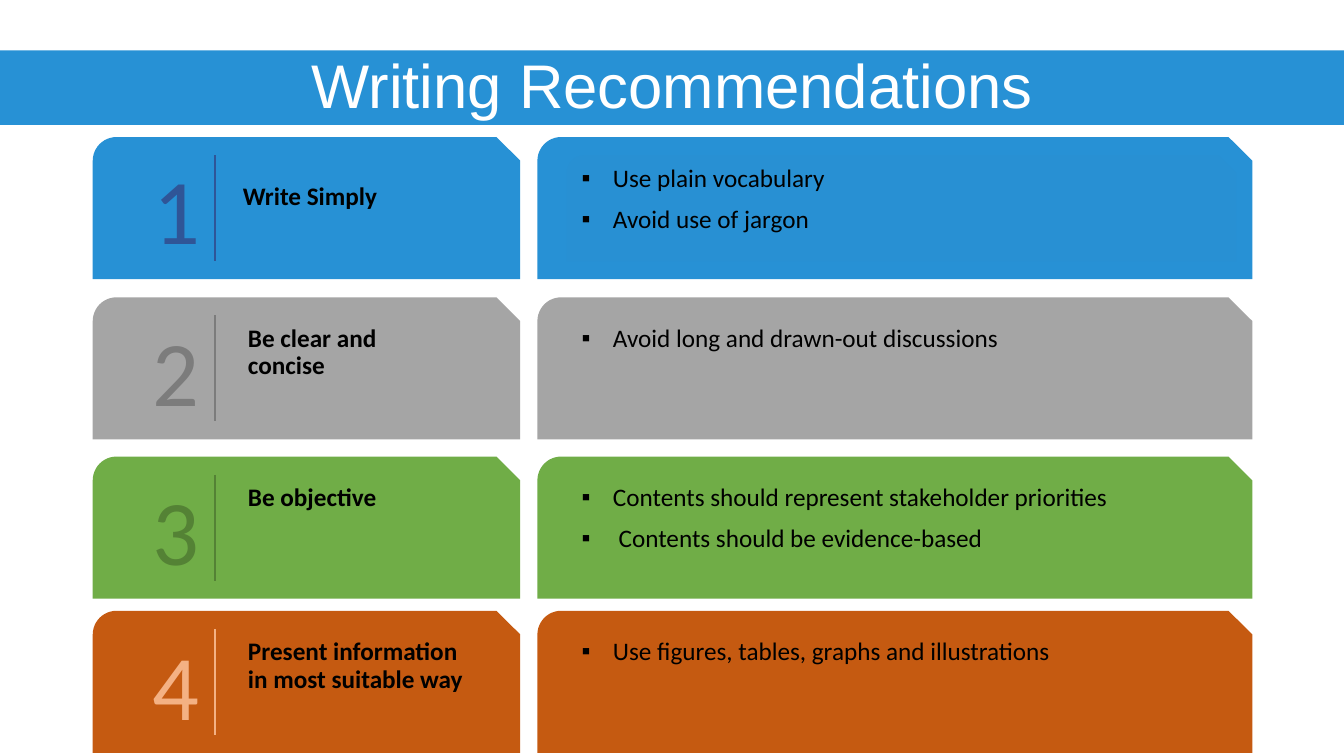
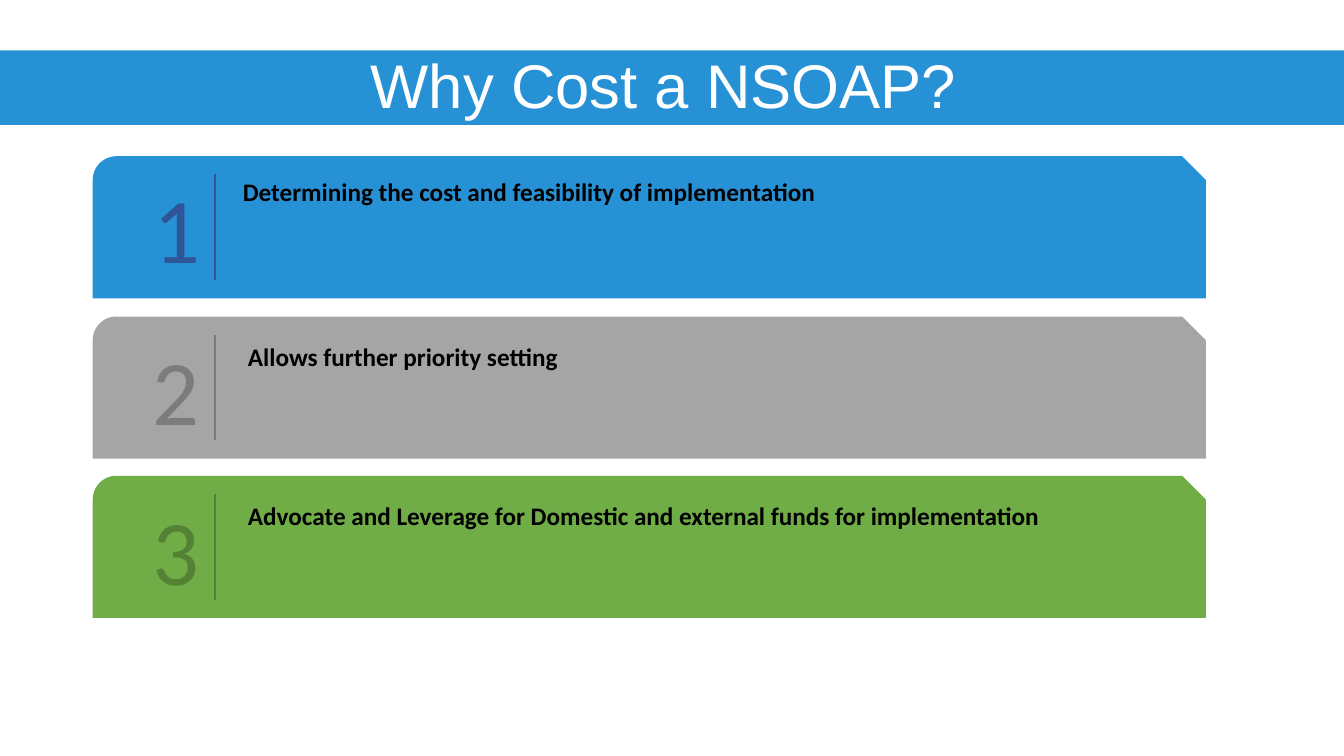
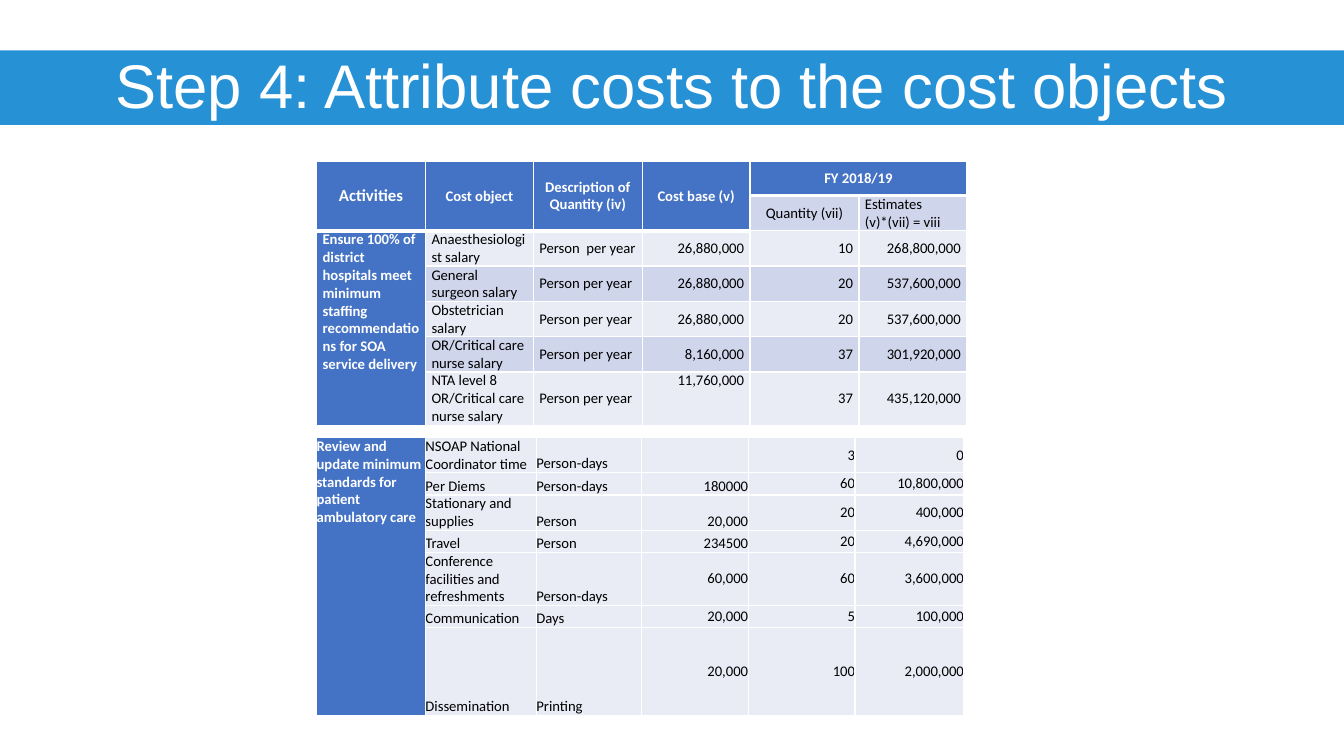
from lxml import etree
from pptx import Presentation
from pptx.dml.color import RGBColor
from pptx.enum.shapes import MSO_CONNECTOR, MSO_SHAPE
from pptx.enum.text import MSO_ANCHOR, PP_ALIGN
from pptx.oxml.ns import qn
from pptx.util import Pt

PX = 9144  # 100 px to the inch


class Theme:
    band = "2791D5"
    white = "FFFFFF"
    black = "000000"
    bullet_panel = "2890D3"
    head = "4472C4"
    dark_row = "CFD5EA"
    light_row = "E9EBF5"
    # card fill, number colour
    cards = [("2791D5", "2F5597"), ("A5A5A5", "7C7C7C"),
             ("70AD47", "548235"), ("C55A11", "F4B183")]
    title = {"name": "Arial", "size": Pt(44)}
    number = {"name": "Calibri", "size": Pt(66)}
    heading = {"name": "Calibri", "size": Pt(18), "bold": True}
    body = {"name": "Calibri", "size": Pt(18)}
    cell = {"name": "Calibri", "size": Pt(10.5), "bold": False}
    cell_head = {"name": "Calibri", "size": Pt(10.5), "bold": True}
    cell_first = {"name": "Calibri", "size": Pt(12), "bold": True}


ANCHOR = {"t": MSO_ANCHOR.TOP, "m": MSO_ANCHOR.MIDDLE, "b": MSO_ANCHOR.BOTTOM}
ALIGN = {"l": PP_ALIGN.LEFT, "c": PP_ALIGN.CENTER, "r": PP_ALIGN.RIGHT}
TIGHT = {"line_spacing": 0.9, "alignment": PP_ALIGN.LEFT}
NO_INSET = dict.fromkeys(
    ["margin_left", "margin_top", "margin_right", "margin_bottom"], 0)
CARD = MSO_SHAPE.SNIP_ROUND_RECTANGLE


def box(s, kind, x, y, w, h, fill=None):
    """Add a filled preset shape, or a text box when kind is None."""
    at = [v * PX for v in (x, y, w, h)]
    if kind is None:
        return s.shapes.add_textbox(*at)
    sp = s.shapes.add_shape(kind, *at)
    sp.shadow.inherit = False
    sp.fill.solid()
    sp.fill.fore_color.rgb = RGBColor.from_string(fill)
    sp.line.fill.background()
    return sp


def write(tf, lines, font, color, para, frame, bullet=None):
    """Fill a text frame with one paragraph per line."""
    for name, value in {"word_wrap": True, **frame}.items():
        setattr(tf, name, value)
    for i, line in enumerate(lines):
        p = tf.add_paragraph() if i else tf.paragraphs[0]
        for name, value in para.items():
            setattr(p, name, value)
        if i:
            p.space_before = Pt(10)
        if bullet:
            pPr = p._p.get_or_add_pPr()
            pPr.set("marL", str(31 * PX))
            pPr.set("indent", str(-31 * PX))
            etree.SubElement(pPr, qn("a:buFont"), typeface="Arial")
            etree.SubElement(pPr, qn("a:buChar"), char=bullet)
        r = p.add_run()
        r.text = line
        for name, value in font.items():
            setattr(r.font, name, value)
        r.font.color.rgb = RGBColor.from_string(color)


prs = Presentation()
prs.slide_width, prs.slide_height = 1333 * PX, 750 * PX

# Slides with the shared band and title
slides = []
for title in ["Writing Recommendations", "Why Cost a NSOAP? ",
              "Step 4: Attribute costs to the cost objects"]:
    s = prs.slides.add_slide(prs.slide_layouts[6])
    box(s, MSO_SHAPE.RECTANGLE, 0, 50, 1333, 74, Theme.band)
    write(box(s, None, 92, 40, 1150, 96).text_frame, [title],
          Theme.title, Theme.white,
          {"alignment": PP_ALIGN.CENTER, "line_spacing": 0.9},
          {"vertical_anchor": MSO_ANCHOR.MIDDLE})
    slides.append(s)

# Numbered cards: heading, heading width, heading drop, bullets
recommendations = [
    ("Write Simply", 230, 41,
     ["Use plain vocabulary", "Avoid use of jargon"]),
    ("Be clear and concise", 230, 18,
     ["Avoid long and drawn-out discussions"]),
    ("Be objective", 251, 18,
     ["Contents should represent stakeholder priorities",
      " Contents should be evidence-based"]),
    ("Present information in most suitable way", 251, 18,
     ["Use figures, tables, graphs and illustrations"]),
]
reasons = [
    ("Determining the cost and feasibility of implementation", 666, 18, []),
    ("Allows further priority setting", 505, 18, []),
    ("Advocate and Leverage for Domestic and external funds for "
     "implementation", 851, 18, []),
]
card_tops = [136, 295, 453, 606]

for s, cards, shift, card_w in [(slides[0], recommendations, 0, 424),
                                (slides[1], reasons, 19, 1104)]:
    for i, (heading, heading_w, drop, bullets) in enumerate(cards):
        top = card_tops[i] + shift
        fill, accent = Theme.cards[i]
        kind = CARD if i else None  # the first card carries plain text boxes
        box(s, CARD, 92, top, card_w, 141, fill)
        write(box(s, kind, 138, top + 13, 76, 114, fill).text_frame,
              [str(i + 1)], Theme.number, accent,
              {"alignment": PP_ALIGN.CENTER},
              {"vertical_anchor": MSO_ANCHOR.MIDDLE, **NO_INSET})
        write(box(s, kind, 231, top + drop, heading_w, 123 - drop,
                  fill).text_frame,
              [heading], Theme.heading, Theme.black, TIGHT,
              {"vertical_anchor": MSO_ANCHOR.TOP})
        # Divider between number and heading
        ends = [v * PX for v in (213, top + 18, 213, top + 123)]
        line = s.shapes.add_connector(MSO_CONNECTOR.STRAIGHT, *ends)
        line.line.color.rgb = RGBColor.from_string(accent)
        line.line.width = Pt(1.5)
        etree.SubElement(line._element.spPr, qn("a:effectLst"))
        # Bullet panel on the right
        if bullets:
            box(s, CARD, 533, top, 709, 141, fill)
            panel = fill if i else Theme.bullet_panel
            write(box(s, CARD, 562, top + 18, 664, 105, panel).text_frame,
                  bullets, Theme.body, Theme.black, TIGHT,
                  {"vertical_anchor": MSO_ANCHOR.TOP}, bullet="▪")

# Cost tables: each row is anchors, alignments, fill, texts
HEAD, DARK, LIGHT = Theme.head, Theme.dark_row, Theme.light_row
staffing = [
    ("mmmmmm", "cccccc", HEAD,
     ["Activities", "Cost object", "Description of Quantity (iv)",
      "Cost base (v)", "FY 2018/19", ""]),
    ("mmmmmm", "cccccl", DARK,
     ["", "", "", "", "Quantity (vii)", "Estimates (v)*(vii) = viii"]),
    ("tmmmmm", "lllrrr", LIGHT,
     ["Ensure 100% of district hospitals meet minimum staffing "
      "recommendations for SOA service delivery", "Anaesthesiologist salary",
      "Person  per year", "26,880,000", "10", "268,800,000"]),
    ("tmmmmm", "lllrrr", DARK,
     ["", "General surgeon salary", "Person per year", "26,880,000", "20",
      "537,600,000"]),
    ("tmmmmm", "lllrrr", LIGHT,
     ["", "Obstetrician salary", "Person per year", "26,880,000", "20",
      "537,600,000"]),
    ("tmmmmm", "lllrrr", DARK,
     ["", "OR/Critical care nurse salary", "Person per year", "8,160,000",
      "37", "301,920,000"]),
    ("tmmtmm", "lllrrr", LIGHT,
     ["", "NTA level 8 OR/Critical care nurse salary", "Person per year",
      "11,760,000", "37", "435,120,000"]),
]
standards = [
    ("tbbbmm", "lllrrr", LIGHT,
     ["Review and update minimum standards for patient ambulatory care",
      "NSOAP National Coordinator time", "Person-days", "", "3", "0"]),
    ("tbbbmm", "lllrrr", LIGHT,
     ["", "Per Diems", "Person-days", "180000", "60", "10,800,000"]),
    ("tbbbmm", "lllrrr", LIGHT,
     ["", "Stationary and supplies", "Person", "20,000", "20", "400,000"]),
    ("tbbbmm", "lllrrr", LIGHT,
     ["", "Travel", "Person", "234500", "20", "4,690,000"]),
    ("tbbmmm", "lllrrr", LIGHT,
     ["", "Conference facilities and refreshments", "Person-days", "60,000",
      "60", "3,600,000"]),
    ("tbbmmm", "lllrrr", LIGHT,
     ["", "Communication", "Days", "20,000", "5", "100,000"]),
    ("tbbmmm", "lllrrr", LIGHT,
     ["", "Dissemination", "Printing", "20,000", "100", "2,000,000"]),
]
# rows, top, column widths, row heights, side inset, merged ranges
tables = [
    (standards, 434, [108, 110, 104, 106, 106, 108],
     [34, 22, 35, 22, 52, 22, 86], 0, [(0, 0, 6, 0)]),
    (staffing, 160, [108, 107] * 3, [34, 35, 35, 35, 35, 35, 53], 6,
     [(0, c, 1, c) for c in range(4)] + [(0, 4, 0, 5), (2, 0, 6, 0)]),
]

for rows, top, widths, heights, inset, merges in tables:
    table = slides[2].shapes.add_table(
        len(rows), len(widths), 314 * PX, top * PX,
        sum(widths) * PX, sum(heights) * PX).table
    table.first_row = table.horz_banding = False
    for col, w in zip(table.columns, widths):
        col.width = w * PX
    for row, h in zip(table.rows, heights):
        row.height = h * PX
    for i, (anchors, aligns, row_fill, texts) in enumerate(rows):
        for j, text in enumerate(texts):
            cell = table.cell(i, j)
            is_head = j == 0 or row_fill == HEAD
            sides = {**NO_INSET, "margin_left": inset * PX,
                     "margin_right": inset * PX}
            for name, value in sides.items():
                setattr(cell, name, value)
            cell.vertical_anchor = ANCHOR[anchors[j]]
            # White borders, thick under the header
            under_head = rows is staffing and (i == 0 or (i == 1 and j < 4))
            tcPr = cell._tc.get_or_add_tcPr()
            for side in "LRTB":
                width = 3 if side == "B" and under_head else 1
                ln = etree.SubElement(tcPr, qn("a:ln" + side),
                                      w=str(Pt(width)))
                solid = etree.SubElement(ln, qn("a:solidFill"))
                etree.SubElement(solid, qn("a:srgbClr"), val=Theme.white)
            cell.fill.solid()
            cell.fill.fore_color.rgb = RGBColor.from_string(
                HEAD if is_head else row_fill)
            if text:
                font = Theme.cell_head if is_head else Theme.cell
                if text == "Activities":
                    font = Theme.cell_first
                write(cell.text_frame, [text], font,
                      Theme.white if is_head else Theme.black,
                      {"alignment": ALIGN[aligns[j]]}, {})
            else:
                etree.SubElement(cell.text_frame.paragraphs[0]._p,
                                 qn("a:endParaRPr"), sz="1050")
    for r0, c0, r1, c1 in merges:
        table.cell(r0, c0).merge(table.cell(r1, c1))

prs.save("out.pptx")
